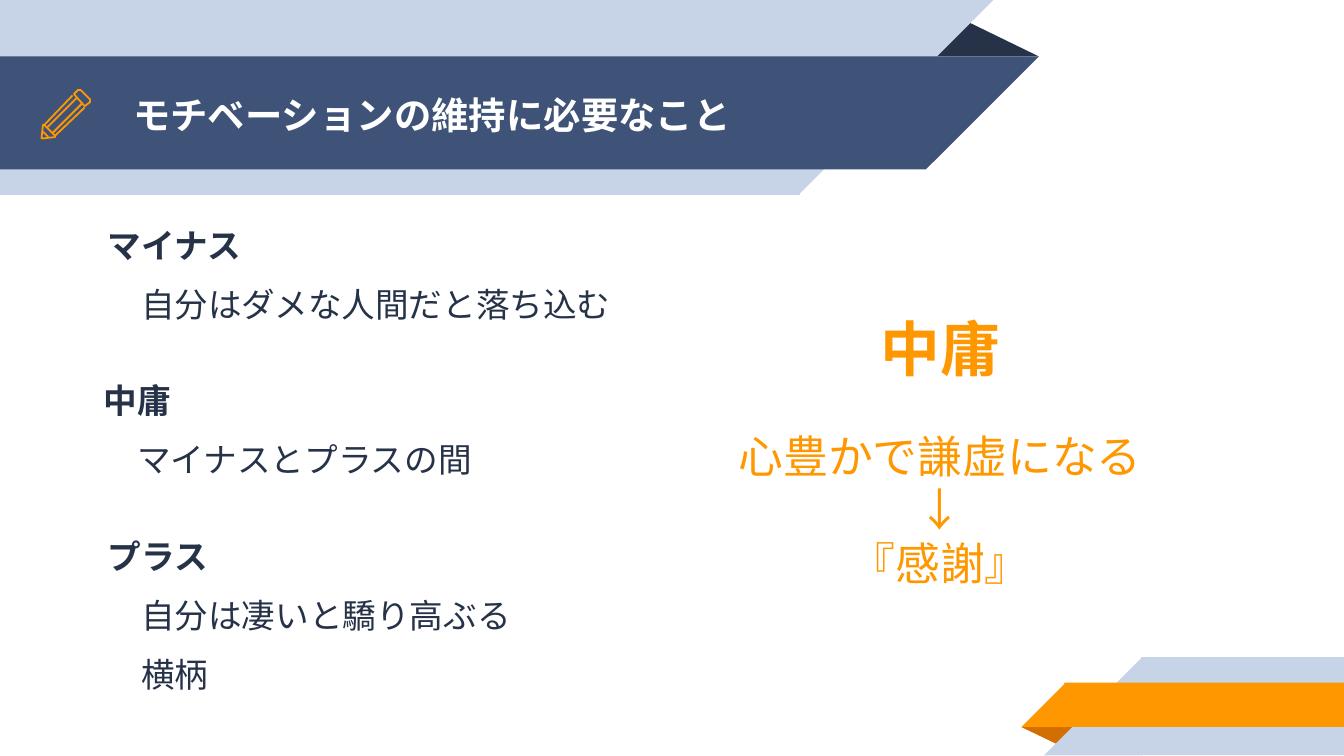
"""Build the slide on what is needed to keep up motivation."""
from lxml.etree import SubElement
from pptx import Presentation
from pptx.dml.color import RGBColor
from pptx.enum.shapes import MSO_SHAPE as SHAPE
from pptx.enum.text import MSO_ANCHOR as ANCHOR, MSO_AUTO_SIZE as FIT, PP_ALIGN as ALIGN
from pptx.oxml.ns import qn
from pptx.util import Inches, Pt

FONT = "Noto Sans CJK JP"
NAVY, BLUE, PALE = "263248", "3F5378", "C7D3E6"
ORANGE, RUST, WHITE = "FF9800", "D26F00", "FFFFFF"


def rgb(value):
    return RGBColor.from_string(value)


def style(paragraph, size, color, bold, align, before=0, margin=0):
    properties = paragraph._p.get_or_add_pPr()
    properties.set("marL", str(Inches(margin)))
    properties.set("indent", "0")
    SubElement(properties, qn("a:buNone"))
    paragraph.alignment = align
    paragraph.space_before = Pt(before)
    font = paragraph.font
    font.size, font.bold, font.name = Pt(size), bold, FONT
    font.color.rgb = rgb(color)
    SubElement(font._element, qn("a:ea"), typeface=FONT)


prs = Presentation()
prs.slide_width = Inches(10)
prs.slide_height = Inches(10) * 9 // 16
slide = prs.slides.add_slide(prs.slide_layouts[4])
shapes = slide.shapes
title, *bodies, spare = list(slide.placeholders)
spare._element.getparent().remove(spare._element)

ribbons = [
    (SHAPE.ISOSCELES_TRIANGLE, 6.88, 0.14, 0.85, 0.28, NAVY, 0),
    (SHAPE.RECTANGLE, 0, 0, 5.95, 1.45, PALE, 0),
    (SHAPE.RIGHT_TRIANGLE, 5.94, 0, 1.45, 1.45, PALE, 180),
    (SHAPE.RECTANGLE, 0, 0.42, 6.89, 0.84, BLUE, 0),
    (SHAPE.RIGHT_TRIANGLE, 6.89, 0.42, 0.84, 0.84, BLUE, 180),
    (SHAPE.ISOSCELES_TRIANGLE, 7.6, 5.41, 0.43, 0.14, RUST, 180),
    (SHAPE.RECTANGLE, 8.49, 4.89, 1.51, 0.73, PALE, 0),
    (SHAPE.RIGHT_TRIANGLE, 7.77, 4.89, 0.73, 0.73, PALE, 0),
    (SHAPE.RECTANGLE, 7.92, 5.08, 2.08, 0.33, ORANGE, 0),
    (SHAPE.RIGHT_TRIANGLE, 7.6, 5.08, 0.33, 0.33, ORANGE, 0),
]
for kind, left, top, width, height, color, rotation in ribbons:
    ribbon = shapes.add_shape(kind, Inches(left), Inches(top), Inches(width), Inches(height))
    ribbon.shadow.inherit = False
    ribbon.fill.solid()
    ribbon.fill.fore_color.rgb = rgb(color)
    ribbon.line.fill.background()
    ribbon.rotation = rotation
    if kind == SHAPE.ISOSCELES_TRIANGLE:
        ribbon.adjustments[0] = 0.324
    if kind == SHAPE.RIGHT_TRIANGLE:
        ribbon._element.spPr.xfrm.set("flipH", "1")

shapes._spTree.append(title._element)
title.left, title.top, title.width, title.height = map(Inches, (0.89, 0.43, 5.75, 0.84))
title.text_frame.text = "モチベーションの維持に必要なこと"
title.text_frame.vertical_anchor = ANCHOR.MIDDLE
title.text_frame.auto_size = FIT.NONE
style(title.text_frame.paragraphs[0], 20, WHITE, True, ALIGN.LEFT)

states = [
    (0.7, 1.57, 4.03, 0.98, ["マイナス", "自分はダメな人間だと落ち込む"]),
    (0.67, 2.73, 4.17, 0.98, ["中庸", "マイナスとプラスの間"]),
    (0.7, 3.89, 3.33, 1.43, ["プラス", "自分は凄いと驕り高ぶる", "横柄"]),
]
for body, (left, top, width, height, lines) in zip(bodies, states):
    shapes._spTree.append(body._element)
    body.left, body.top, body.width, body.height = map(Inches, (left, top, width, height))
    frame = body.text_frame
    frame.text = "\n".join(lines)
    frame.vertical_anchor = ANCHOR.TOP
    frame.auto_size = FIT.NONE
    frame.margin_top = frame.margin_bottom = Inches(0.1)
    heading, *details = frame.paragraphs
    style(heading, 18, NAVY, True, ALIGN.LEFT, before=6)
    for detail in details:
        style(detail, 18, NAVY, False, ALIGN.LEFT, before=10, margin=0.25)

conclusion = shapes.add_textbox(Inches(5.37), Inches(2.27), Inches(3.25), Inches(2.19)).text_frame
conclusion.text = "中庸\n心豊かで謙虚になる\n↓\n『感謝』"
conclusion.word_wrap = False
conclusion.auto_size = FIT.SHAPE_TO_FIT_TEXT
keyword, *steps = conclusion.paragraphs
style(keyword, 32, ORANGE, True, ALIGN.CENTER)
for step, gap in zip(steps, (24, 0, 0)):
    style(step, 24, ORANGE, False, ALIGN.CENTER, before=gap)

pencil = [
    ([(67, 74), (60, 67), (59, 67), (58, 67), (55, 70), (63, 79), (67, 76), (67, 75)], True),
    ([(61, 77), (39, 99)], False),
    ([(54, 71), (33, 93), (32, 93), (31, 102), (31, 103), (32, 103), (41, 102), (41, 101),
      (63, 80)], False),
    ([(35, 95), (57, 73)], False),
    ([(36, 102), (32, 98)], False),
    ([(33, 93), (41, 101)], False),
]
for points, closed in pencil:
    builder = shapes.build_freeform(*points[0], scale=Inches(0.01))
    builder.add_line_segments(points[1:], close=closed)
    stroke = builder.convert_to_shape()
    stroke.shadow.inherit = False
    stroke.fill.background()
    stroke.line.color.rgb = rgb(ORANGE)
    stroke.line.width = Pt(0.96)

prs.save("out.pptx")
